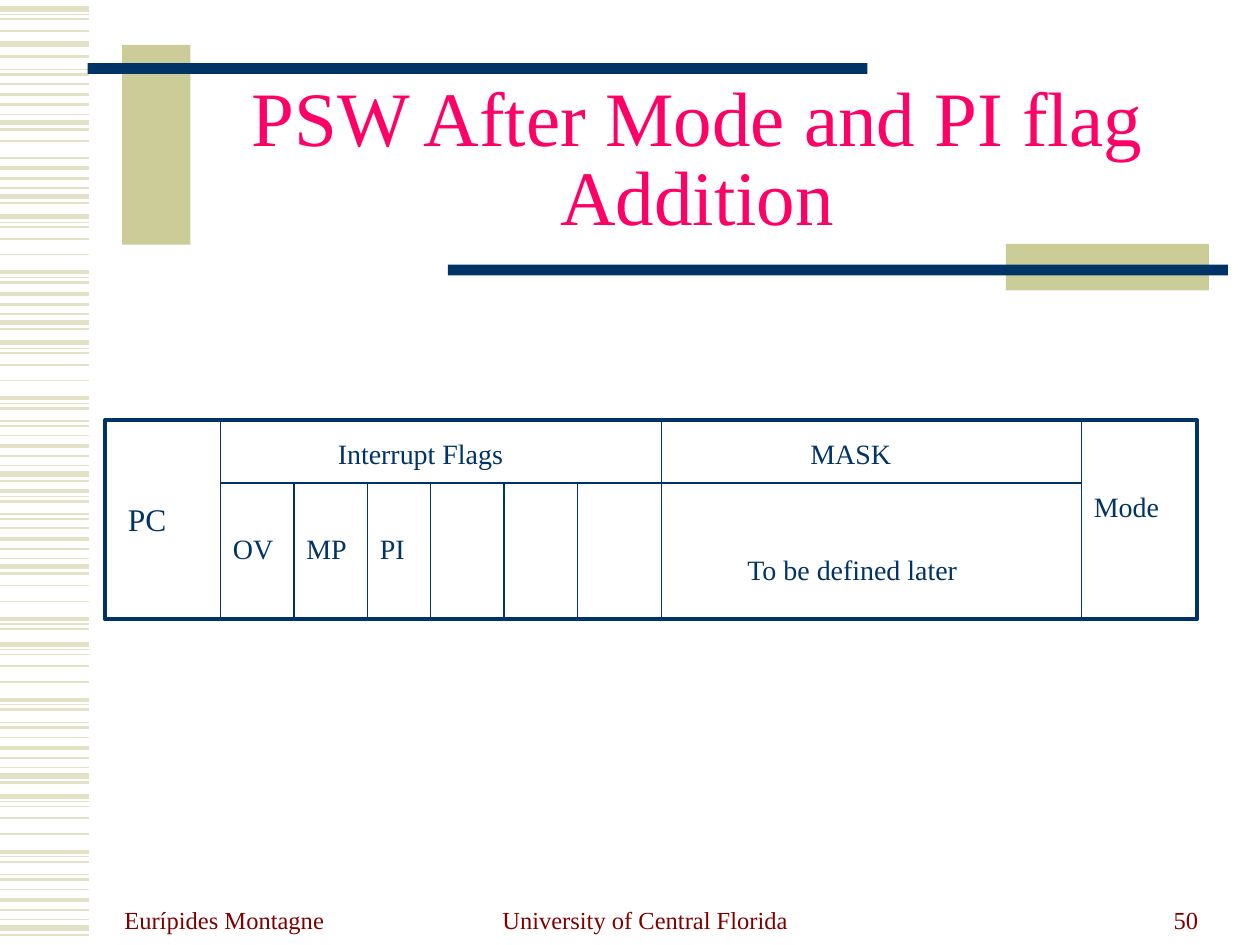
from dataclasses import dataclass
from typing import Optional

from lxml.etree import SubElement
from pptx import Presentation
from pptx.dml.color import RGBColor
from pptx.enum.shapes import MSO_CONNECTOR, MSO_SHAPE
from pptx.enum.text import MSO_ANCHOR as Anchor, MSO_AUTO_SIZE as AutoSize, PP_ALIGN as Align
from pptx.oxml.ns import qn
from pptx.util import Pt

NAVY, TAN, PALE, MAROON, PINK = "003366", "CCCC99", "E3E2C7", "800000", "FF0066"


@dataclass
class Box:
    x: float
    y: float
    w: float
    h: float


@dataclass
class Label:
    text: str
    box: Box
    size: float = 16
    color: str = NAVY
    align: Align = Align.LEFT
    anchor: Anchor = Anchor.TOP


@dataclass
class Bar:
    box: Box
    fill: str
    line: Optional[str] = None


@dataclass
class Stripe:
    offset: float
    width: float


@dataclass
class Band:
    y: float
    stripes: list[Stripe]


SHORT = [Stripe(-17.3, 1), Stripe(-11.3, 2.25), Stripe(-5.5, 1.5),
         Stripe(0, 0.75), Stripe(4.7, 3), Stripe(8.6, 1.5)]
LONG = [Stripe(0, 3), Stripe(3.2, 0.75), Stripe(5.9, 1), Stripe(12.6, 1), Stripe(21.7, 1),
        Stripe(31.7, 2.25), Stripe(34.6, 0.75), Stripe(37.5, 1.5), Stripe(44.7, 0.75), Stripe(47.6, 1.5)]
BANDS = [
    Band(5.1, LONG[:4]), Band(25.2, LONG[:1]), Band(-5.1, LONG[7:]),
    Band(65.3, SHORT), Band(59, LONG[4:5]), Band(107.4, SHORT), Band(123.8, LONG[:8]),
    Band(179.5, SHORT[1:]), Band(195.8, LONG), Band(266.2, SHORT), Band(249.1, LONG[5:]),
    Band(319.2, SHORT), Band(322, LONG[3:8]), Band(368.1, LONG), Band(438.7, SHORT),
    Band(455, LONG), Band(525.6, SHORT),
]
BARS = [
    Bar(Box(69.8, 25.6, 39, 114.2), TAN),
    Bar(Box(50, 36, 445.7, 6.2), NAVY),
    Bar(Box(574.8, 139.4, 116, 26.6), TAN),
    Bar(Box(256, 151.2, 445.7, 6.2), NAVY),
]
LEFT, RIGHT, TOP, MIDDLE, BOTTOM = 126, 618, 240, 276, 354
FULL_DIVIDERS = [LEFT, 378, RIGHT]
FLAG_DIVIDERS = [168, 210, 246, 288, 330]
FIELDS = [
    Label("PC", Box(66, 282, 48, 29), size=18),
    Label("Interrupt Flags", Box(186, 246, 138, 26.6)),
    Label("MASK", Box(456, 246, 78, 26.6)),
    Label("Mode", Box(RIGHT, 276, 72, 26.6)),
    Label("To be defined later", Box(420, 312, 168, 26.6)),
]
FIELDS += [Label(flag, Box(x, 300, 54, 26.6))
           for flag, x in zip(["OV", "MP", "PI"], [LEFT, *FLAG_DIVIDERS])]
FOOTERS = [
    Label(text, Box(x, 501.8, w, 36), 14, MAROON, align, Anchor.BOTTOM)
    for text, x, w, align in [
        ("Eurípides Montagne", 64, 150, Align.LEFT),
        ("University of Central Florida", 247, 243.4, Align.CENTER),
        ("50", 519, 172.8, Align.RIGHT),
    ]
]


def rgb(value: str) -> RGBColor:
    return RGBColor.from_string(value)


def place(box: Box) -> tuple:
    return Pt(box.x), Pt(box.y), Pt(box.w), Pt(box.h)


def add_line(shapes, x1: float, y1: float, x2: float, y2: float, color: str, width: float) -> None:
    line = shapes.add_connector(MSO_CONNECTOR.STRAIGHT, Pt(x1), Pt(y1), Pt(x2), Pt(y2))
    line.line.color.rgb = rgb(color)
    line.line.width = Pt(width)
    SubElement(line._element.spPr, qn("a:effectLst"))


def add_bar(shapes, bar: Bar) -> None:
    sp = shapes.add_shape(MSO_SHAPE.RECTANGLE, *place(bar.box))
    sp.shadow.inherit = False
    sp.fill.solid()
    sp.fill.fore_color.rgb = rgb(bar.fill)
    if bar.line:
        sp.line.color.rgb = rgb(bar.line)
        sp.line.width = Pt(2.25)
    else:
        sp.line.fill.background()


def set_text(tf, text: str, *, size: float, color: str, align: Align, anchor: Anchor,
             spacing: Optional[float] = None) -> None:
    tf.word_wrap = True
    tf.auto_size = AutoSize.NONE
    tf.vertical_anchor = anchor
    p = tf.paragraphs[0]
    p.alignment = align
    p.line_spacing = spacing
    r = p.add_run()
    r.text = text
    r.font.name = "Times New Roman"
    r.font.size = Pt(size)
    r.font.color.rgb = rgb(color)


def add_label(shapes, label: Label) -> None:
    sp = shapes.add_textbox(*place(label.box))
    set_text(sp.text_frame, label.text, size=label.size, color=label.color,
             align=label.align, anchor=label.anchor)


def main() -> None:
    prs = Presentation()
    prs.slide_width, prs.slide_height = Pt(720), Pt(540)
    s = prs.slides.add_slide(prs.slide_layouts[5])

    title = s.shapes.title
    title.left, title.top, title.width, title.height = place(Box(108, 48, 581, 90))
    set_text(title.text_frame, "PSW After Mode and PI flag Addition", size=44, color=PINK,
             align=Align.CENTER, anchor=Anchor.MIDDLE, spacing=0.85)

    backdrop = s.shapes.add_group_shape().shapes
    for band in BANDS:
        for stripe in band.stripes:
            y = band.y + stripe.offset
            add_line(backdrop, 0, y, 51, y, PALE, stripe.width)
    for bar in BARS:
        add_bar(backdrop, bar)

    add_bar(s.shapes, Bar(Box(60, TOP, 624, BOTTOM - TOP), "FFFFFF", NAVY))
    add_line(s.shapes, LEFT, MIDDLE, RIGHT, MIDDLE, NAVY, 0.75)
    for top, dividers in [(TOP, FULL_DIVIDERS), (MIDDLE, FLAG_DIVIDERS)]:
        for x in dividers:
            add_line(s.shapes, x, top, x, BOTTOM, NAVY, 0.75)
    for label in FIELDS + FOOTERS:
        add_label(s.shapes, label)

    prs.save("out.pptx")


if __name__ == "__main__":
    main()
